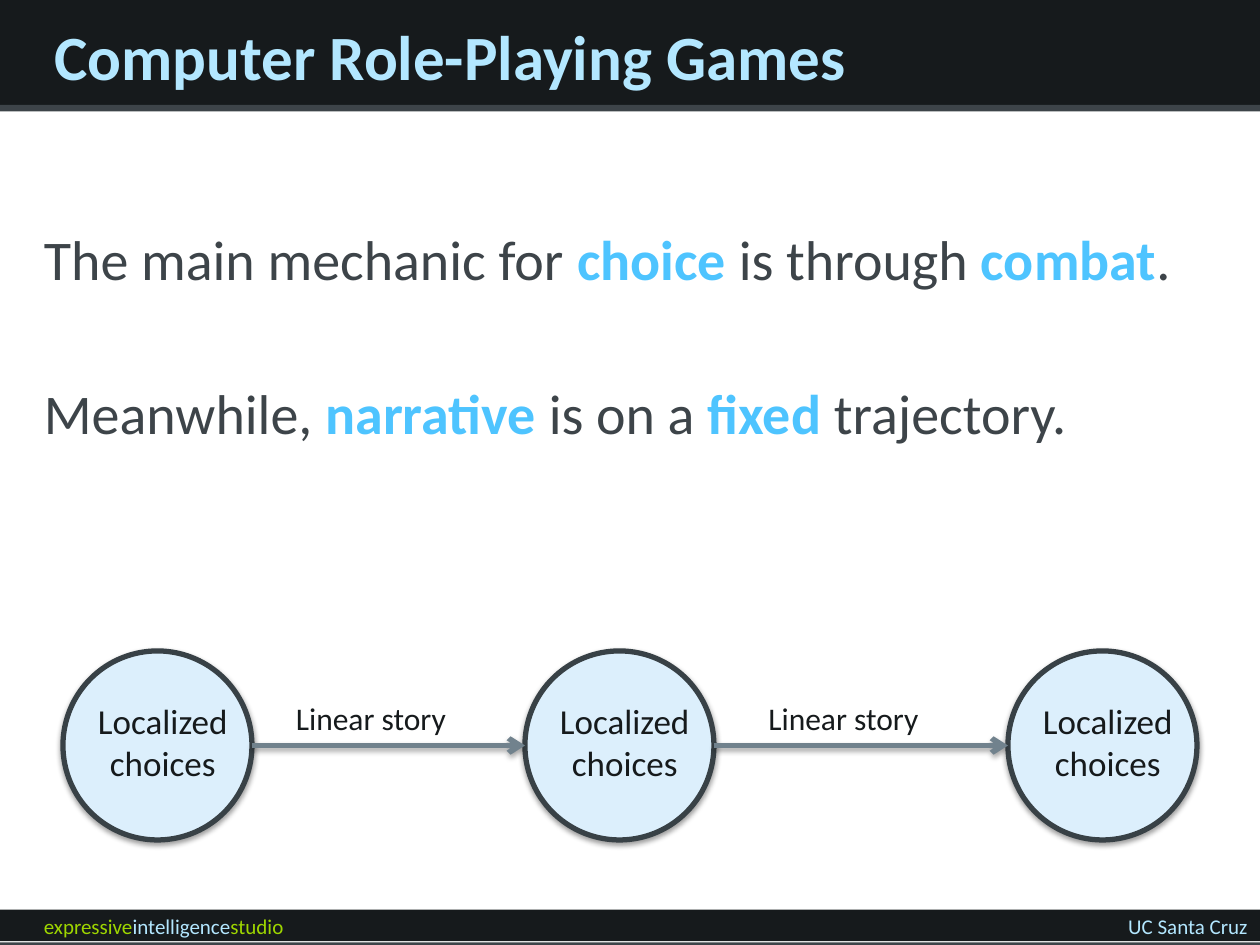
from dataclasses import dataclass

from lxml import etree
from pptx import Presentation
from pptx.dml.color import RGBColor
from pptx.enum.shapes import MSO_CONNECTOR, MSO_SHAPE
from pptx.enum.text import MSO_ANCHOR, PP_ALIGN
from pptx.oxml.ns import qn
from pptx.util import Emu, Pt

RECT, OVAL = MSO_SHAPE.RECTANGLE, MSO_SHAPE.OVAL
STRAIGHT = MSO_CONNECTOR.STRAIGHT
LEFT, CENTER, RIGHT = PP_ALIGN.LEFT, PP_ALIGN.CENTER, PP_ALIGN.RIGHT
TOP, MIDDLE = MSO_ANCHOR.TOP, MSO_ANCHOR.MIDDLE
PX = 9525


@dataclass(frozen=True)
class Theme:
    font: str = "Calibri"
    bar: str = "161A1C"
    strip: str = "3D4449"
    heading: str = "B3E7FF"
    lime: str = "9ED600"
    accent: str = "4EC4FF"
    node_fill: str = "DCEFFC"
    node_line: str = "384146"
    arrow: str = "71828D"
    shadow: str = "000000"
    title_pt: int = 36
    body_pt: int = 32
    node_pt: int = 20
    label_pt: int = 18
    footer_pt: int = 12
    line_pt: int = 3


T = Theme()

TITLE = [("Computer Role-Playing Games", T.heading, True)]
BODY = [
    [("The main mechanic for ", T.strip, False), ("choice", T.accent, True),
     (" is through ", T.strip, False), ("combat", T.accent, True),
     (".", T.strip, False)],
    [("Meanwhile, ", T.strip, False), ("narrative", T.accent, True),
     (" is on a ", T.strip, False), ("fixed", T.accent, True),
     (" trajectory.", T.strip, False)],
]
STUDIO = [("expressive", T.lime, False), ("intelligence", T.heading, False),
          ("studio", T.lime, False)]
SCHOOL = [("UC Santa Cruz", T.heading, False)]
BARS = [(0, 80, T.bar), (693, 24, T.bar), (80, 5, T.strip), (718, 2, T.strip)]

NODE_TEXT = [("Localized choices", T.bar, False)]
LINK_TEXT = [("Linear story", T.bar, False)]
NODE_LEFTS = [48, 400, 768]
LABEL_LEFTS = [216, 576]
NODE_TOP, NODE_SIZE = 496, 144
CAPTION_TOP = 528


def px(*values):
    return [Emu(v * PX) for v in values]


def rgb(color):
    return RGBColor.from_string(color)


def add_filled(s, kind, box, fill):
    sp = s.shapes.add_shape(kind, *px(*box))
    sp.shadow.inherit = False
    sp.fill.solid()
    sp.fill.fore_color.rgb = rgb(fill)
    sp.line.fill.background()
    return sp


def set_line(sp, color):
    sp.line.color.rgb = rgb(color)
    sp.line.width = Pt(T.line_pt)


def add_shadow(sp, alpha, distance):
    spPr = sp._element.spPr
    effects = spPr.find(qn("a:effectLst"))
    if effects is None:
        effects = etree.SubElement(spPr, qn("a:effectLst"))
    shadow = etree.SubElement(effects, qn("a:outerShdw"), blurRad="40000",
                              dist=str(distance), dir="5400000", rotWithShape="0")
    color = etree.SubElement(shadow, qn("a:srgbClr"), val=T.shadow)
    etree.SubElement(color, qn("a:alpha"), val=str(alpha * 1000))


def add_text(s, box, paragraphs, size, align=LEFT, anchor=TOP, wrap=True, gap=0):
    tf = s.shapes.add_textbox(*px(*box)).text_frame
    tf.word_wrap = wrap
    tf.vertical_anchor = anchor
    for i, runs in enumerate(paragraphs):
        p = tf.add_paragraph() if i else tf.paragraphs[0]
        p.alignment = align
        if i:
            p.space_before = Pt(gap)
        for text, color, bold in runs:
            r = p.add_run()
            r.text = text
            r.font.name = T.font
            r.font.size = Pt(size)
            r.font.bold = bold
            r.font.color.rgb = rgb(color)


def add_arrow(s, x1, x2, y):
    line = s.shapes.add_connector(STRAIGHT, *px(x1, y, x2, y))
    set_line(line, T.arrow)
    etree.SubElement(line.line._get_or_add_ln(), qn("a:tailEnd"), type="arrow")
    add_shadow(line, 35, 23000)


def main():
    prs = Presentation()
    prs.slide_width, prs.slide_height = px(960, 720)
    s = prs.slides.add_slide(prs.slide_layouts[6])

    for top, height, color in BARS:
        add_filled(s, RECT, (0, top, 960, height), color)
    add_text(s, (24, 691, 376, 29), [STUDIO], T.footer_pt)
    add_text(s, (640, 691, 320, 29), [SCHOOL], T.footer_pt, RIGHT)
    add_text(s, (32, 0, 864, 84), [TITLE], T.title_pt, anchor=MIDDLE)
    add_text(s, (24, 166, 904, 469), BODY, T.body_pt, gap=50)

    for left in NODE_LEFTS:
        node = add_filled(s, OVAL, (left, NODE_TOP, NODE_SIZE, NODE_SIZE), T.node_fill)
        set_line(node, T.node_line)
        add_shadow(node, 38, 20000)
    for start, end in zip(NODE_LEFTS, NODE_LEFTS[1:]):
        add_arrow(s, start + NODE_SIZE, end, NODE_TOP + NODE_SIZE // 2)
    for left in NODE_LEFTS:
        add_text(s, (left, CAPTION_TOP, 152, 74), [NODE_TEXT], T.node_pt, CENTER)
    for left in LABEL_LEFTS:
        add_text(s, (left, CAPTION_TOP, 135, 38), [LINK_TEXT], T.label_pt, wrap=False)

    prs.save("out.pptx")


if __name__ == "__main__":
    main()
